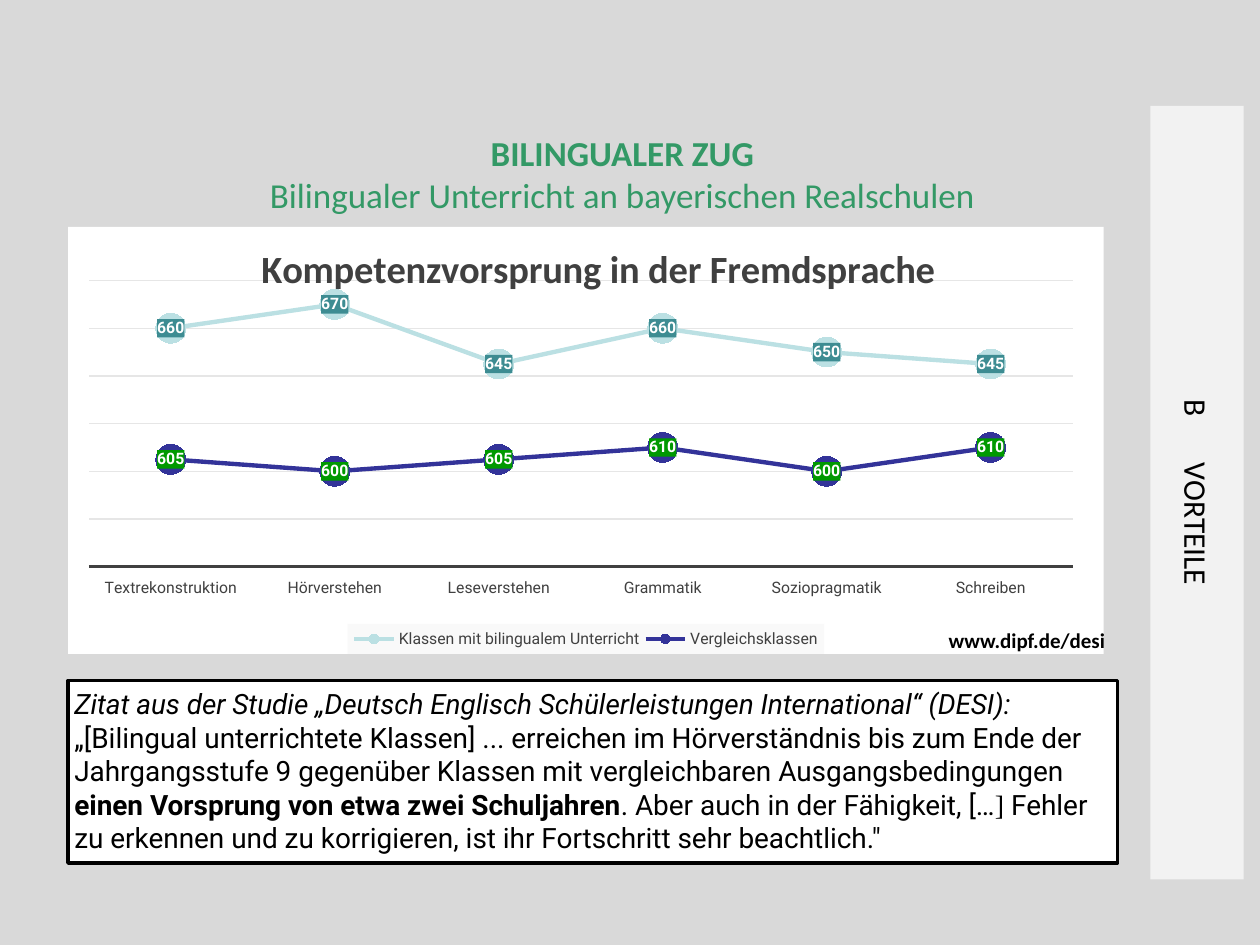
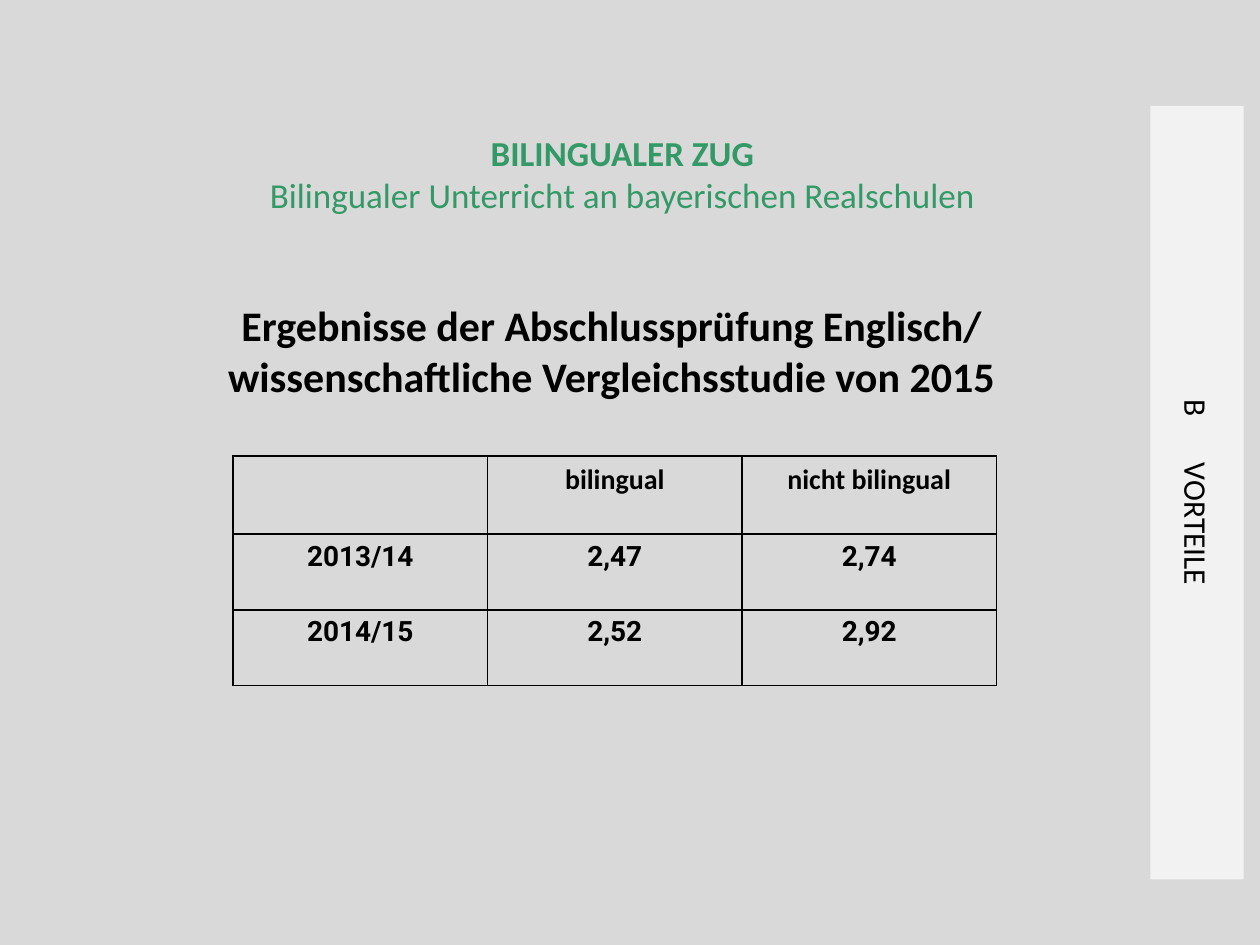
from dataclasses import dataclass

from lxml.etree import SubElement
from pptx import Presentation
from pptx.chart.data import CategoryChartData
from pptx.dml.color import RGBColor
from pptx.enum.chart import XL_CHART_TYPE as ChartType
from pptx.enum.chart import XL_LABEL_POSITION as LabelPos
from pptx.enum.chart import XL_LEGEND_POSITION as LegendPos
from pptx.enum.chart import XL_MARKER_STYLE as Marker
from pptx.enum.chart import XL_TICK_LABEL_POSITION as TickLabels
from pptx.enum.chart import XL_TICK_MARK as TickMark
from pptx.enum.shapes import MSO_SHAPE as Shape
from pptx.enum.text import MSO_ANCHOR as Anchor
from pptx.enum.text import MSO_AUTO_SIZE as AutoSize
from pptx.enum.text import PP_ALIGN as Align
from pptx.oxml import parse_xml
from pptx.oxml.ns import nsdecls, qn
from pptx.util import Inches, Pt

# Colours and fonts
GREY = RGBColor(0xD9, 0xD9, 0xD9)
BAND = RGBColor(0xF2, 0xF2, 0xF2)
GRID = RGBColor(0xE6, 0xE6, 0xE6)
LEGEND = RGBColor(0xF9, 0xF9, 0xF9)
DARK = RGBColor(0x40, 0x40, 0x40)
BLACK = RGBColor(0, 0, 0)
WHITE = RGBColor(0xFF, 0xFF, 0xFF)
GREEN = RGBColor(0x33, 0x99, 0x66)
AQUA = RGBColor(0xBB, 0xE0, 0xE3)
TEAL = RGBColor(0x3D, 0x8C, 0x92)
NAVY = RGBColor(0x33, 0x33, 0x99)
LABEL_GREEN = RGBColor(0, 0x99, 0)
HEAD, BODY = "Calibri", "Roboto"


@dataclass
class Box:
    left: float
    top: float
    width: float
    height: float

    def emu(self) -> list[int]:
        return [Inches(v) for v in (self.left, self.top, self.width, self.height)]


@dataclass
class Run:
    text: str
    size: float
    name: str = HEAD
    color: RGBColor = BLACK
    bold: bool = False
    italic: bool = False


@dataclass
class Line:
    name: str
    values: list[int]
    color: RGBColor
    label_fill: RGBColor


CATEGORIES = ["Textrekonstruktion", "Hörverstehen", "Leseverstehen",
              "Grammatik", "Soziopragmatik", "Schreiben"]
LINES = [
    Line("Klassen mit bilingualem Unterricht", [660, 670, 645, 660, 650, 645], AQUA, TEAL),
    Line("Vergleichsklassen", [605, 600, 605, 610, 600, 610], NAVY, LABEL_GREEN),
]
TITLE = [[Run("BILINGUALER ZUG", 20, color=GREEN, bold=True)],
         [Run("Bilingualer Unterricht an bayerischen Realschulen", 20, color=GREEN)]]
QUOTE = [
    [Run("Zitat aus der Studie „Deutsch Englisch Schülerleistungen International“ (DESI):",
         16, BODY, italic=True)],
    [Run("„[Bilingual unterrichtete Klassen] ... erreichen im Hörverständnis bis zum Ende der "
         "Jahrgangsstufe 9 gegenüber Klassen mit vergleichbaren Ausgangsbedingungen", 16, BODY),
     Run("\n", 16),
     Run("einen Vorsprung von etwa zwei Schuljahren", 16, BODY, bold=True),
     Run(". Aber auch in der Fähigkeit, […", 16, BODY),
     Run("]", 16, "Times New Roman"),
     Run(" Fehler zu erkennen und zu korrigieren, ist ihr Fortschritt sehr beachtlich.\"",
         16, BODY)],
]
RESULTS = [["", "bilingual", "nicht bilingual"],
           ["2013/14", "2,47", "2,74"],
           ["2014/15", "2,52", "2,92"]]


# Text
def set_font(font, size: float, name: str = BODY, color: RGBColor = BLACK,
             bold: bool = False, italic: bool = False) -> None:
    formats = {"size": Pt(size), "name": name, "bold": bold, "italic": italic}
    for key, value in formats.items():
        setattr(font, key, value)
    font.color.rgb = color


def write(tf, paragraphs: list[list[Run]], align: Align = Align.CENTER,
          anchor: Anchor = Anchor.TOP, inset: float = 0.05, wrap: bool = True) -> None:
    formats = {"word_wrap": wrap, "auto_size": AutoSize.NONE, "vertical_anchor": anchor}
    formats |= {f"margin_{side}": Inches(inset) for side in ("left", "top", "right", "bottom")}
    for key, value in formats.items():
        setattr(tf, key, value)
    for i, runs in enumerate(paragraphs):
        p = tf.paragraphs[0] if i == 0 else tf.add_paragraph()
        p.alignment = align
        for run in runs:
            if run.text == "\n":
                p.add_line_break()
                continue
            r = p.add_run()
            r.text = run.text
            set_font(r.font, run.size, run.name, run.color, run.bold, run.italic)


def add_text(s, box: Box, paragraphs: list[list[Run]], **options):
    sp = s.shapes.add_textbox(*box.emu())
    write(sp.text_frame, paragraphs, **options)
    return sp


def add_rect(s, box: Box, fill: RGBColor):
    sp = s.shapes.add_shape(Shape.RECTANGLE, *box.emu())
    sp.shadow.inherit = False
    sp.fill.solid()
    sp.fill.fore_color.rgb = fill
    sp.line.fill.background()
    return sp


# Shared background, title and side band
def add_slide(prs):
    s = prs.slides.add_slide(prs.slide_layouts[5])
    s.background.fill.solid()
    s.background.fill.fore_color.rgb = GREY
    title = s.shapes.title
    title.left, title.top, title.width, title.height = Box(1.3, 0.99, 7.28, 0.77).emu()
    write(title.text_frame, TITLE)
    band = add_rect(s, Box(9.13, 0.84, 0.74, 6.14), BAND)
    write(band.text_frame, [[Run("B\tVORTEILE", 18)]], anchor=Anchor.MIDDLE)
    band.text_frame._txBody.bodyPr.set("vert", "vert")
    return s


# Chart details without a public method
def set_layout(parent, index: int, inner: bool = False, **parts: float) -> None:
    for old in parent.findall(qn("c:layout")):
        parent.remove(old)
    layout = parse_xml(f"<c:layout {nsdecls('c')}><c:manualLayout/></c:layout>")
    values = {"layoutTarget": "inner"} if inner else {}
    values |= {"xMode": "edge", "yMode": "edge"} | parts
    for key, value in values.items():
        SubElement(layout[0], qn(f"c:{key}")).set("val", str(value))
    parent.insert(index, layout)


def fill_behind(parent, fill: RGBColor) -> None:
    parent.find(qn("c:txPr")).addprevious(parse_xml(
        f'<c:spPr {nsdecls("c", "a")}><a:solidFill><a:srgbClr val="{fill}"/></a:solidFill>'
        "<a:ln><a:noFill/></a:ln></c:spPr>"))


def style_line(series, line: Line) -> None:
    series.smooth = False
    series.format.line.color.rgb = line.color
    series.format.line.width = Pt(2.5)
    series.marker.style, series.marker.size = Marker.CIRCLE, 17
    series.marker.format.fill.solid()
    series.marker.format.fill.fore_color.rgb = line.color
    series.marker.format.line.color.rgb = line.color
    labels = series.data_labels
    labels.show_value, labels.position = True, LabelPos.CENTER
    set_font(labels.font, 9, color=WHITE, bold=True)


def add_line_chart(s, box: Box) -> None:
    data = CategoryChartData()
    data.categories = CATEGORIES
    for line in LINES:
        data.add_series(line.name, line.values)
    chart = s.shapes.add_chart(ChartType.LINE_MARKERS, *box.emu(), data).chart
    root = chart.element
    set_font(chart.font, 10)
    fill_behind(root, WHITE)

    chart.has_title = True
    p = chart.chart_title.text_frame.paragraphs[0]
    r = p.add_run()
    r.text = "Kompetenzvorsprung in der Fremdsprache"
    set_font(r.font, 22, HEAD, DARK, bold=True)
    set_layout(root.xpath("c:chart/c:title")[0], 1, x=0.18, y=0.02)

    chart.has_legend = True
    chart.legend.position = LegendPos.BOTTOM
    chart.legend.include_in_layout = False
    set_font(chart.legend.font, 9, color=DARK)
    legend = root.xpath("c:chart/c:legend")[0]
    set_layout(legend, 1, x=0.27, y=0.93, w=0.46, h=0.07)
    fill_behind(legend, LEGEND)

    axis = chart.category_axis
    axis.major_tick_mark = axis.minor_tick_mark = TickMark.NONE
    axis.tick_label_position = TickLabels.LOW
    axis.format.line.color.rgb = DARK
    axis.format.line.width = Pt(1.5)
    set_font(axis.tick_labels.font, 9, color=DARK)

    axis = chart.value_axis
    formats = {"visible": False, "minimum_scale": 560, "maximum_scale": 680,
               "major_unit": 20, "has_major_gridlines": True}
    for key, value in formats.items():
        setattr(axis, key, value)
    axis.major_gridlines.format.line.color.rgb = GRID
    axis.major_gridlines.format.line.width = Pt(0.75)

    plot = chart.plots[0]
    plot.vary_by_categories = False
    set_layout(root.xpath("c:chart/c:plotArea")[0], 0, inner=True,
               x=0.02, y=0.126, w=0.95, h=0.67)
    for series, line in zip(plot.series, LINES):
        style_line(series, line)
    for labels, line in zip(root.xpath(".//c:ser/c:dLbls"), LINES):
        fill_behind(labels, line.label_fill)


# Results table
def add_borders(cell) -> None:
    tc_pr = cell._tc.get_or_add_tcPr()
    for i, side in enumerate("LRTB"):
        tc_pr.insert(i, parse_xml(
            f'<a:ln{side} {nsdecls("a")} w="{Pt(1)}"><a:solidFill>'
            f'<a:srgbClr val="{BLACK}"/></a:solidFill></a:ln{side}>'))


def add_results(s, box: Box) -> None:
    table = s.shapes.add_table(len(RESULTS), len(RESULTS[0]), *box.emu()).table
    table.first_row = table.horz_banding = False
    for row, height in zip(table.rows, (0.62, 0.6, 0.6)):
        row.height = Inches(height)
    for i, texts in enumerate(RESULTS):
        for j, text in enumerate(texts):
            cell = table.cell(i, j)
            cell.fill.background()
            add_borders(cell)
            if text:
                p = cell.text_frame.paragraphs[0]
                p.alignment = Align.CENTER
                r = p.add_run()
                r.text = text
                set_font(r.font, 16, BODY if i else HEAD, bold=True)


def build_competence(prs) -> None:
    s = add_slide(prs)
    add_line_chart(s, Box(0.54, 1.8, 8.22, 3.39))
    quote = add_rect(s, Box(0.54, 5.4, 8.33, 1.45), WHITE)
    quote.line.color.rgb = BLACK
    quote.line.width = Pt(2)
    write(quote.text_frame, QUOTE, align=Align.LEFT)
    add_text(s, Box(7.39, 4.88, 1.48, 0.3), [[Run("www.dipf.de/desi", 12, bold=True)]],
             align=Align.RIGHT, inset=0.1, wrap=False)


def build_exam_results(prs) -> None:
    s = add_slide(prs)
    heading = ("Ergebnisse der Abschlussprüfung Englisch/",
               "wissenschaftliche Vergleichsstudie von 2015")
    add_text(s, Box(1.56, 2.33, 6.59, 0.91), [[Run(text, 24, bold=True)] for text in heading])
    add_results(s, Box(1.85, 3.62, 6.06, 1.82))


def main() -> None:
    prs = Presentation()
    prs.slide_width, prs.slide_height = Inches(10), Inches(7.5)
    build_competence(prs)
    build_exam_results(prs)
    prs.save("out.pptx")


if __name__ == "__main__":
    main()
